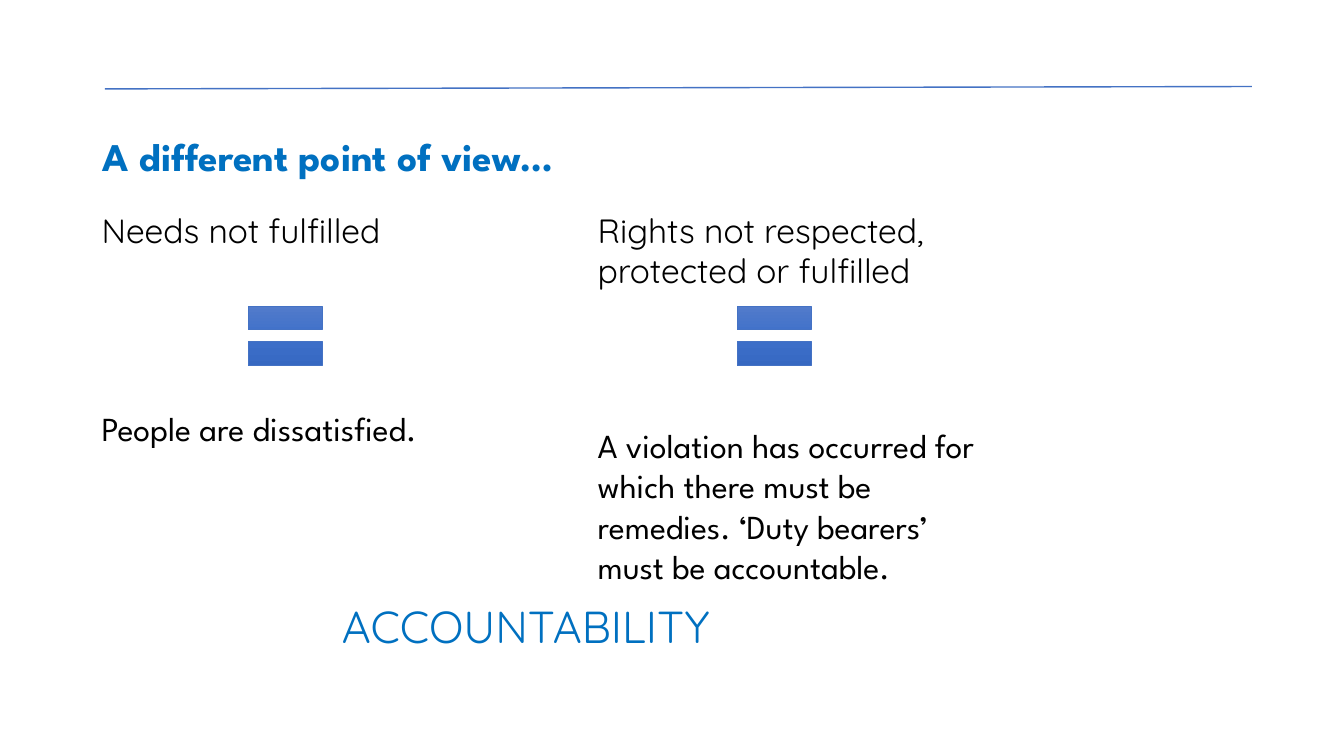
"""Build the slide that contrasts unmet needs with unrespected rights."""
from lxml import etree
from pptx import Presentation
from pptx import util as u
from pptx.dml.color import RGBColor
from pptx.enum import shapes, text
from pptx.oxml import parse_xml
from pptx.oxml.ns import qn, nsdecls

COLORS = {"heading": "0070C0", "body": "000000", "line": "4472C4"}
GRADIENT = {0: "6183CB", 50: "3E70CA", 100: "3062BB"}
HEADING_FONT, LIGHT_FONT = "League Spartan", "Quicksand"

TITLE = "A different point of view…"
CONCLUSION = "ACCOUNTABILITY"
COLUMNS = [
    {"left": 2.31, "width": 10.41, "equal_left": 5.92, "gap": 113,
     "premise": "Needs not fulfilled",
     "result": "People are dissatisfied."},
    {"left": 14.81, "width": 10.16, "equal_left": 18.24, "gap": 96,
     "premise": "Rights not respected, protected or fulfilled",
     "result": "A violation has occurred for which there must be remedies. "
               "‘Duty bearers’ must be accountable."},
]
COLUMN_TOP, COLUMN_HEIGHT = 5.16, 9.73
EQUAL_TOP, EQUAL_SIZE = 7.19, 2.54


def write(paragraph, words, font=LIGHT_FONT, size=24, color="body", bold=False,
          align=text.PP_ALIGN.LEFT, before=0, spacing=None):
    """Fill a paragraph with formatted words."""
    paragraph.alignment = align
    paragraph.space_before = u.Pt(before)
    paragraph.line_spacing = spacing
    run = paragraph.add_run()
    run.text = words
    run.font.name, run.font.size, run.font.bold = font, u.Pt(size), bold
    run.font.color.rgb = RGBColor.from_string(COLORS[color])


def add_text_frame(slide, *box):
    """Add a wrapping text box measured in centimetres."""
    frame = slide.shapes.add_textbox(*map(u.Cm, box)).text_frame
    frame.word_wrap = True
    return frame


def add_rule(slide):
    """Draw the thin line above the title."""
    rule = slide.shapes.add_connector(
        shapes.MSO_CONNECTOR.STRAIGHT, *map(u.Cm, (2.64, 2.24, 31.55, 2.18)))
    rule.line.color.rgb = RGBColor.from_string(COLORS["line"])
    rule.line.width = u.Pt(1)
    etree.SubElement(rule._element.spPr, qn("a:effectLst"))


def add_equal_sign(slide, left):
    """Draw an equal sign with a vertical gradient."""
    equal = slide.shapes.add_shape(
        shapes.MSO_SHAPE.MATH_EQUAL,
        *map(u.Cm, (left, EQUAL_TOP, EQUAL_SIZE, EQUAL_SIZE)))
    stops = "".join(f'<a:gs pos="{place * 1000}"><a:srgbClr val="{color}"/></a:gs>'
                    for place, color in GRADIENT.items())
    equal._element.spPr.append(parse_xml(
        f'<a:gradFill {nsdecls("a")} rotWithShape="1"><a:gsLst>{stops}</a:gsLst>'
        '<a:lin ang="5400000" scaled="0"/></a:gradFill>'))
    equal.line.color.rgb = RGBColor.from_string(COLORS["line"])
    equal.line.width = u.Pt(0.5)
    equal.shadow.inherit = False


def main():
    """Assemble and save the slide."""
    presentation = Presentation()
    presentation.slide_width, presentation.slide_height = u.Cm(33.87), u.Cm(19.05)
    slide = presentation.slides.add_slide(presentation.slide_layouts[5])
    add_rule(slide)

    title = slide.shapes.title
    title.left, title.top, title.width, title.height = map(u.Cm, (2.34, 3.33, 29.21, 1.8))
    title.text_frame.vertical_anchor = text.MSO_ANCHOR.TOP
    write(title.text_frame.paragraphs[0], TITLE, font=HEADING_FONT, size=28,
          color="heading", bold=True, spacing=0.9)

    for column in COLUMNS:
        frame = add_text_frame(slide, column["left"], COLUMN_TOP,
                               column["width"], COLUMN_HEIGHT)
        write(frame.paragraphs[0], column["premise"])
        write(frame.add_paragraph(), column["result"], font=HEADING_FONT,
              before=column["gap"])
        add_equal_sign(slide, column["equal_left"])

    conclusion = add_text_frame(slide, 2.13, 14.96, 22.25, 1.63)
    write(conclusion.paragraphs[0], CONCLUSION, size=32, color="heading",
          align=text.PP_ALIGN.CENTER)
    presentation.save("out.pptx")


if __name__ == "__main__":
    main()
